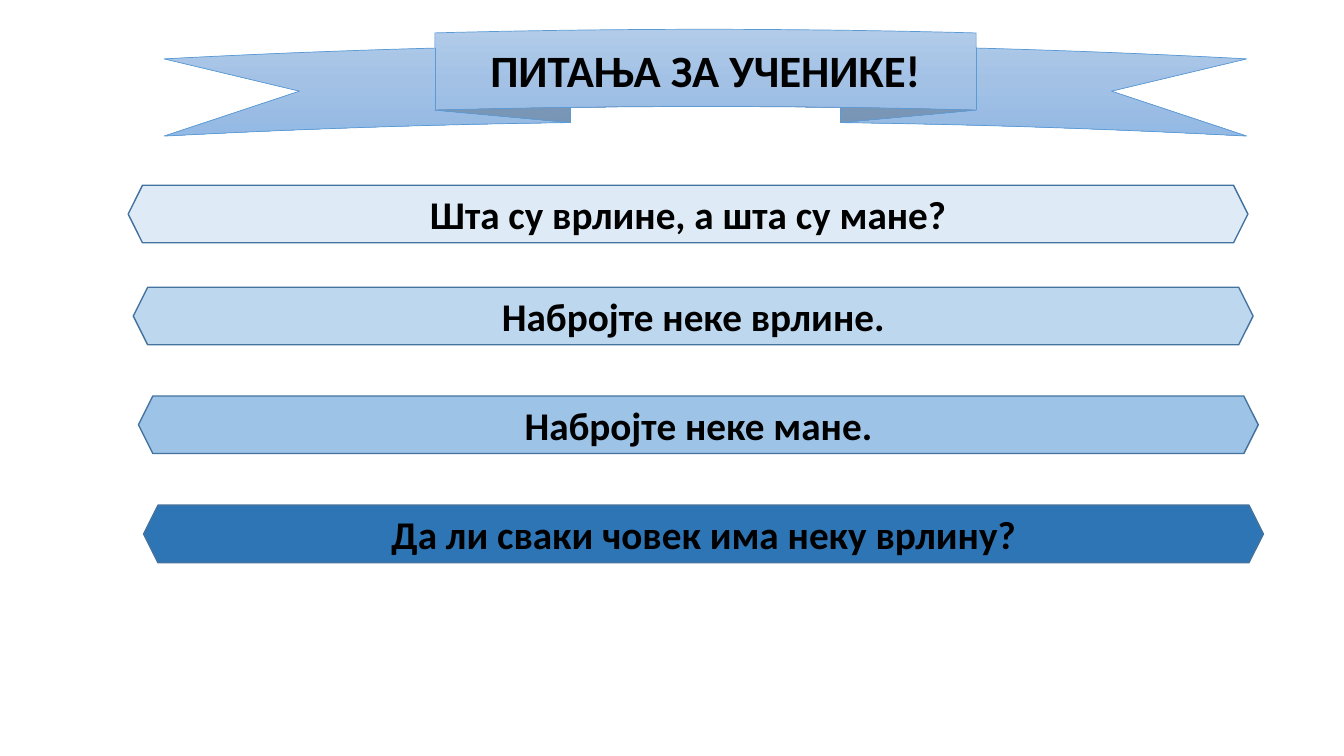
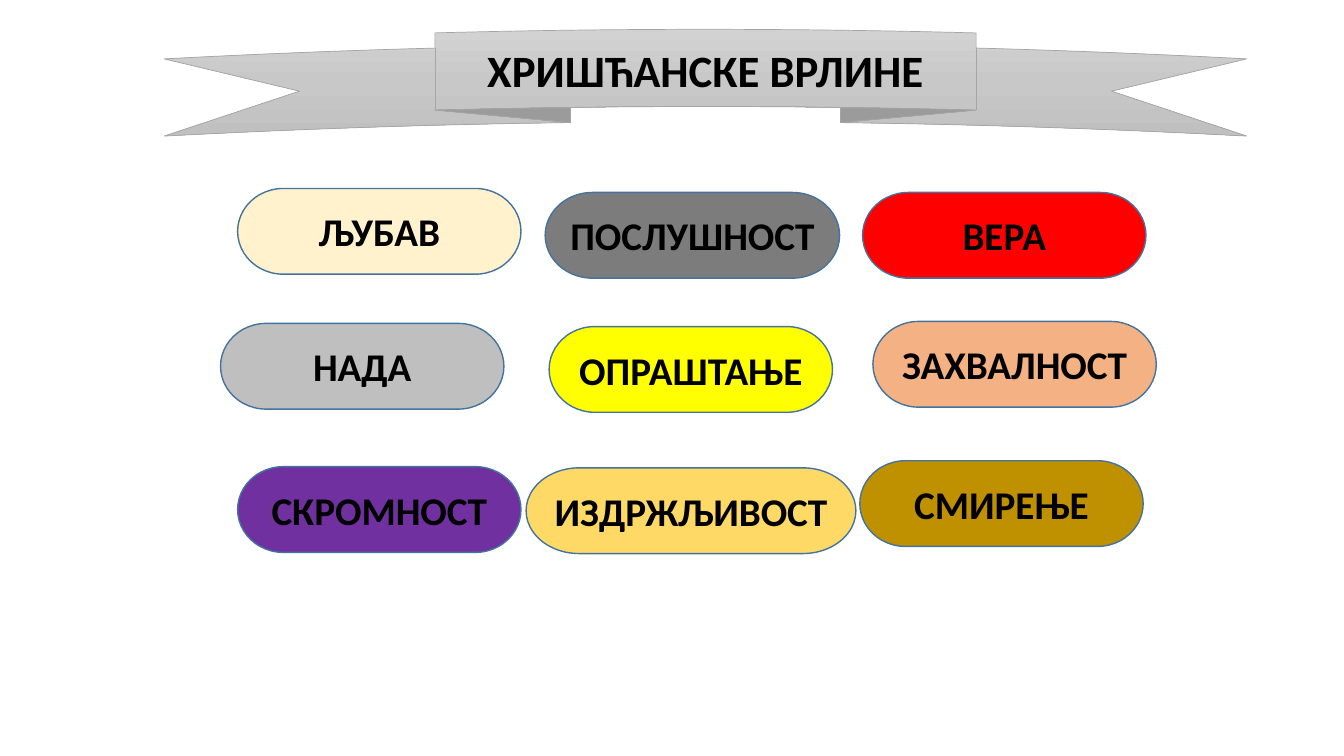
import copy

import pptx
import pptx.dml.color
import pptx.enum.shapes
import pptx.enum.text
import pptx.oxml.ns
import pptx.util

Cm = pptx.util.Cm
Pt = pptx.util.Pt
SHAPES = pptx.enum.shapes.MSO_SHAPE

FONT = "Calibri"
COLOURS = {
    "text": "000000",
    "outline": "43739E",
    "ribbon blue edge": "5B9BD5",
    "ribbon grey edge": "A5A5A5",
    "ice": "DEEBF7",
    "pale blue": "BDD7EE",
    "sky": "9DC3E6",
    "blue": "2E75B6",
    "cream": "FFF2CC",
    "dark grey": "7C7C7C",
    "red": "FF0000",
    "silver": "BFBFBF",
    "yellow": "FFFF00",
    "peach": "F4B183",
    "purple": "7030A0",
    "gold": "FFD966",
    "bronze": "BF9000",
}
RIBBON_GRADIENTS = {
    "blue": ("B1CBE9", "A3C1E5", "93B9E4"),
    "grey": ("D2D2D2", "C8C8C8", "C0C0C0"),
}

# Sizes in centimetres
QUESTION_LEFT, QUESTION_STEP = 3.23, 0.13
QUESTION_WIDTH, QUESTION_HEIGHT = 28.22, 1.45
VIRTUE_WIDTH, VIRTUE_HEIGHT = 7.14, 2.16

# Question, top, fill
QUESTIONS = [
    ("Шта су врлине, а шта су мане?", 4.67, "ice"),
    ("Набројте неке врлине.", 7.24, "pale blue"),
    ("Набројте неке мане.", 9.98, "sky"),
    ("Да ли сваки човек има неку врлину?", 12.73, "blue"),
]

# Virtue, left, top, width, fill
VIRTUES = [
    ("ЉУБАВ", 5.99, 4.75, VIRTUE_WIDTH, "cream"),
    ("ПОСЛУШНОСТ", 13.74, 4.85, 7.42, "dark grey"),
    ("ВЕРА", 21.74, 4.85, VIRTUE_WIDTH, "red"),
    ("НАДА", 5.56, 8.15, VIRTUE_WIDTH, "silver"),
    ("ОПРАШТАЊЕ", 13.84, 8.23, VIRTUE_WIDTH, "yellow"),
    ("ЗАХВАЛНОСТ", 22, 8.1, VIRTUE_WIDTH, "peach"),
    ("СКРОМНОСТ", 5.99, 11.76, VIRTUE_WIDTH, "purple"),
    ("ИЗДРЖЉИВОСТ", 13.26, 11.79, 8.31, "gold"),
    ("СМИРЕЊЕ", 21.67, 11.61, VIRTUE_WIDTH, "bronze"),
]


def rgb(hex_value):
    return pptx.dml.color.RGBColor.from_string(hex_value)


def write_text(shape, text, size=28, bold=True, colour="text"):
    frame = shape.text_frame
    frame.word_wrap = True
    frame.vertical_anchor = pptx.enum.text.MSO_ANCHOR.MIDDLE
    paragraph = frame.paragraphs[0]
    paragraph.alignment = pptx.enum.text.PP_ALIGN.CENTER
    run = paragraph.add_run()
    run.text = text
    run.font.name = FONT
    run.font.size = Pt(size)
    run.font.bold = bold
    run.font.color.rgb = rgb(COLOURS[colour])


def add_outlined(slide, kind, box, outline="outline", weight=1):
    shape = slide.shapes.add_shape(kind, *(Cm(length) for length in box))
    shape.shadow.inherit = False
    shape.line.color.rgb = rgb(COLOURS[outline])
    shape.line.width = Pt(weight)
    return shape


def add_label(slide, kind, box, text, fill):
    label = add_outlined(slide, kind, box)
    label.fill.solid()
    label.fill.fore_color.rgb = rgb(COLOURS[fill])
    write_text(label, text)


def fill_gradient(shape, colours):
    shape.fill.gradient()
    shape.fill.gradient_angle = 270
    # A new gradient has two stops; add the middle one
    stop_list = shape._element.spPr.find(".//" + pptx.oxml.ns.qn("a:gsLst"))
    stop_list.insert(1, copy.deepcopy(stop_list[0]))
    for stop, colour, position in zip(shape.fill.gradient_stops, colours, (0, 0.5, 1)):
        stop.color.rgb = rgb(colour)
        stop.position = position


def add_title_ribbon(slide, title, tone):
    ribbon = add_outlined(slide, SHAPES.CURVED_UP_RIBBON, (4.14, 0.74, 27.28, 2.69),
                          outline=f"ribbon {tone} edge", weight=0.5)
    for index, value in enumerate((0.277, 0.5, 0.135)):
        ribbon.adjustments[index] = value
    fill_gradient(ribbon, RIBBON_GRADIENTS[tone])
    write_text(ribbon, title, size=32)


def add_titled_slide(deck, title, tone):
    slide = deck.slides.add_slide(deck.slide_layouts[6])
    add_title_ribbon(slide, title, tone)
    return slide


def main():
    deck = pptx.Presentation()
    deck.slide_width, deck.slide_height = Cm(33.87), Cm(19.05)

    # Questions, each set slightly further right
    questions = add_titled_slide(deck, "ПИТАЊА ЗА УЧЕНИКЕ!", "blue")
    for index, (question, top, fill) in enumerate(QUESTIONS):
        left = QUESTION_LEFT + index * QUESTION_STEP
        add_label(questions, SHAPES.HEXAGON,
                  (left, top, QUESTION_WIDTH, QUESTION_HEIGHT), question, fill)

    # Virtues in three loose rows
    virtues = add_titled_slide(deck, "ХРИШЋАНСКЕ ВРЛИНЕ", "grey")
    for virtue, left, top, width, fill in VIRTUES:
        add_label(virtues, SHAPES.FLOWCHART_TERMINATOR,
                  (left, top, width, VIRTUE_HEIGHT), virtue, fill)

    deck.save("out.pptx")


if __name__ == "__main__":
    main()
